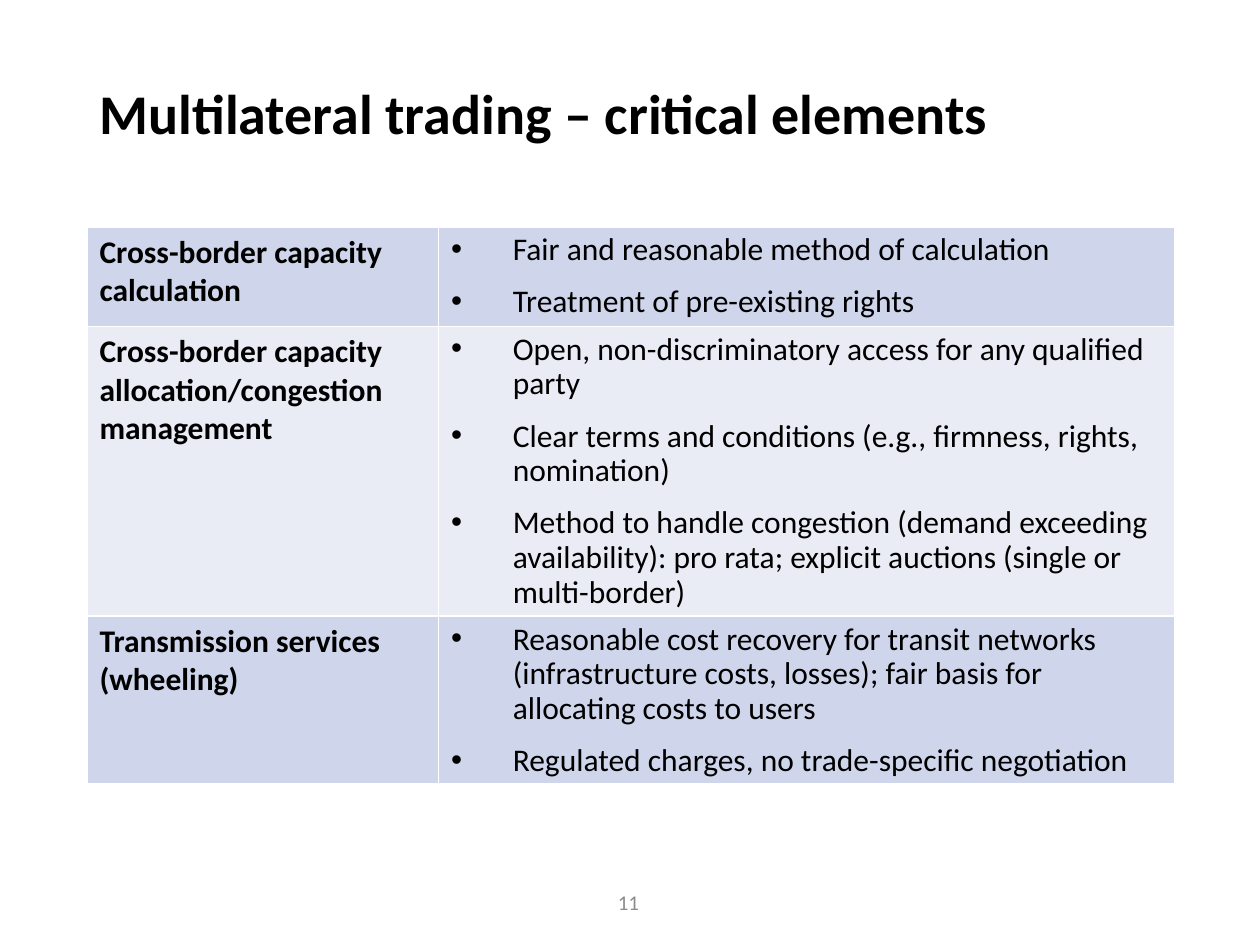
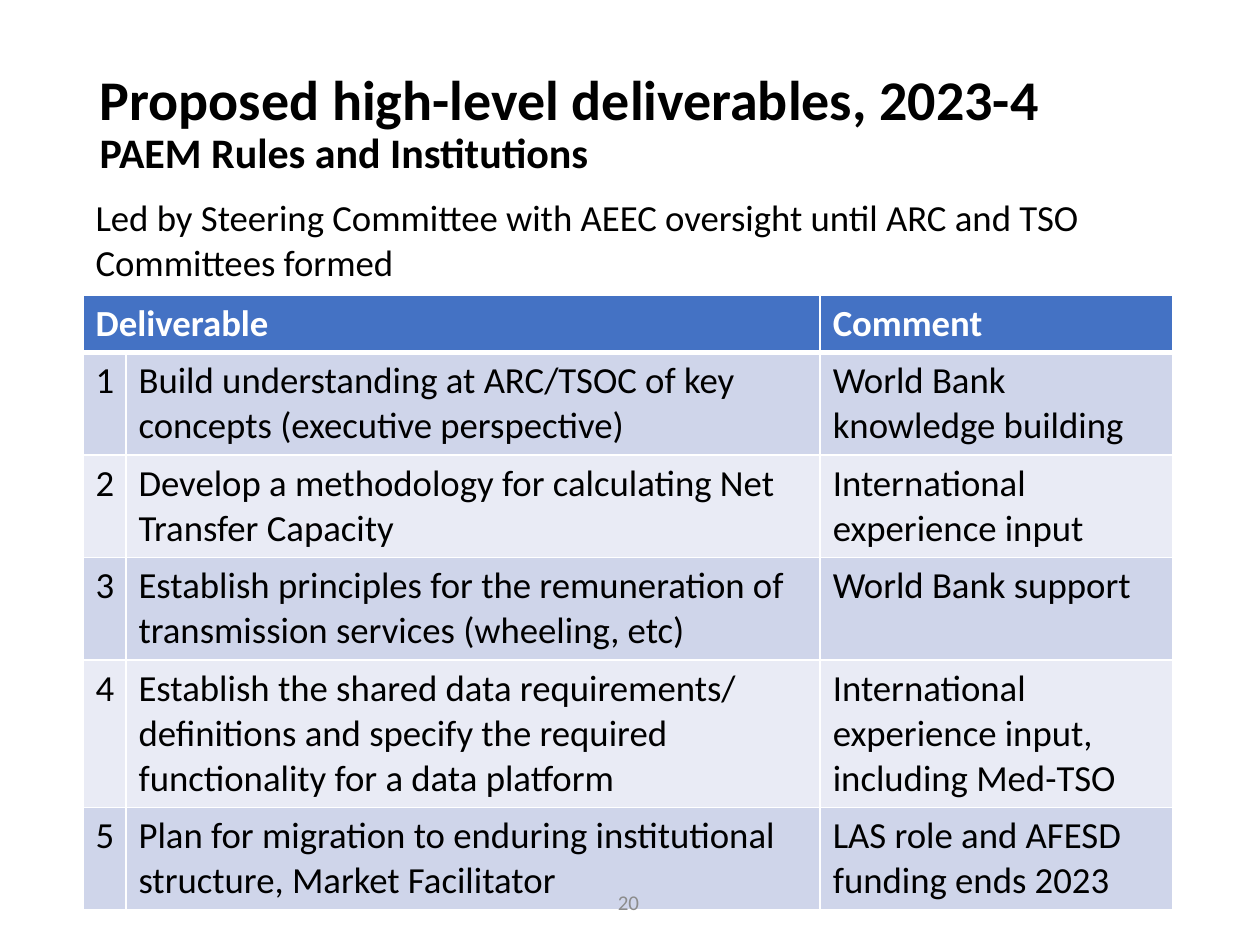
from lxml.etree import SubElement
from pptx import Presentation
from pptx.dml.color import RGBColor
from pptx.enum.text import MSO_ANCHOR, PP_ALIGN
from pptx.oxml.ns import qn
from pptx.util import Inches, Pt

# Colours
BLACK = RGBColor(0x00, 0x00, 0x00)
WHITE = RGBColor(0xFF, 0xFF, 0xFF)
GREY = RGBColor(0x8C, 0x8C, 0x8C)
BLUE = RGBColor(0x44, 0x72, 0xC4)
BANDS = (RGBColor(0xCF, 0xD5, 0xEA), RGBColor(0xE9, 0xEB, 0xF5))

# Text formats
BASE = {"name": "Calibri", "bold": False}
HEAD = {**BASE, "size": Pt(32), "bold": True}
SUB = {**HEAD, "size": Pt(24)}
BODY = {**BASE, "size": Pt(18)}
LABEL = {**BODY, "bold": True}
LARGE = {**BASE, "size": Pt(21)}
TOP = {**LARGE, "bold": True}
SMALL = {**BASE, "size": Pt(12)}

# Grid of 100 columns by 75 rows
WIDE, HIGH = Inches(10), Inches(7.5)
COLS, ROWS = 100, 75
INDENT = 4.9

# Table content
TRADE = [
    ("Cross-border capacity calculation", [
        "Fair and reasonable method of calculation",
        "Treatment of pre-existing rights"]),
    ("Cross-border capacity allocation/congestion management", [
        "Open, non-discriminatory access for any qualified party",
        "Clear terms and conditions (e.g., firmness, rights, nomination)",
        "Method to handle congestion (demand exceeding availability): "
        "pro rata; explicit auctions (single or multi-border)"]),
    ("Transmission services (wheeling)", [
        "Reasonable cost recovery for transit networks (infrastructure "
        "costs, losses); fair basis for allocating costs to users",
        "Regulated charges, no trade-specific negotiation"]),
]
GOALS = [
    ("Build understanding at ARC/TSOC of key concepts (executive perspective)",
     "World Bank knowledge building"),
    ("Develop a methodology for calculating Net Transfer Capacity",
     "International experience input"),
    ("Establish principles for the remuneration of transmission services "
     "(wheeling, etc)", "World Bank support"),
    ("Establish the shared data requirements/ definitions and specify the "
     "required functionality for a data platform",
     "International experience input, including Med-TSO"),
    ("Plan for migration to enduring institutional structure, "
     "Market Facilitator", "LAS role and AFESD funding ends 2023"),
]


def across(n):
    return round(WIDE * n / COLS)


def down(n):
    return round(HIGH * n / ROWS)


class Deck:
    def __init__(self):
        self.file = Presentation()
        self.file.slide_width, self.file.slide_height = WIDE, HIGH
        self.slide = None

    def add_run(self, para, text, form, tint=BLACK):
        run = para.add_run()
        run.text = text
        for key, value in form.items():
            setattr(run.font, key, value)
        run.font.color.rgb = tint

    def title(self, row, text, sub=None):
        """Start a slide with its title."""
        self.slide = self.file.slides.add_slide(self.file.slide_layouts[5])
        shape = self.slide.shapes.title
        spot = {"left": across(6.9), "top": down(row),
                "width": across(86.2), "height": down(10.2)}
        for key, value in spot.items():
            setattr(shape, key, value)
        frame = shape.text_frame
        frame.vertical_anchor = MSO_ANCHOR.TOP
        para = frame.paragraphs[0]
        para.alignment, para.line_spacing = PP_ALIGN.LEFT, 0.9
        self.add_run(para, text, HEAD)
        if sub:
            para.add_line_break()
            self.add_run(para, sub, SUB)

    def text(self, x, y, w, h, text, form, tint=BLACK,
             align=PP_ALIGN.LEFT, anchor=MSO_ANCHOR.TOP):
        box = self.slide.shapes.add_textbox(
            across(x), down(y), across(w), down(h))
        frame = box.text_frame
        frame.word_wrap, frame.vertical_anchor = True, anchor
        para = frame.paragraphs[0]
        para.alignment = align
        self.add_run(para, text, form, tint)

    def number(self, value):
        self.text(29.2, 69.6, 22.5, 4, str(value), SMALL, GREY,
                  PP_ALIGN.RIGHT, MSO_ANCHOR.MIDDLE)

    def table(self, x, y, widths, heights, head=False):
        grid = self.slide.shapes.add_table(
            len(heights), len(widths), across(x), down(y),
            across(sum(widths)), down(sum(heights))).table
        grid.first_row, grid.horz_banding = head, False
        for col, width in zip(grid.columns, widths):
            col.width = across(width)
        for row, height in zip(grid.rows, heights):
            row.height = down(height)
        return grid

    def edge(self, cell, base=1):
        """Draw white cell borders."""
        props = cell._tc.get_or_add_tcPr()
        for side, size in zip("LRTB", (1, 1, 1, base)):
            line = SubElement(props, qn(f"a:ln{side}"), w=str(Pt(size)))
            fill = SubElement(line, qn("a:solidFill"))
            SubElement(fill, qn("a:srgbClr"), val=str(WHITE))

    def cell(self, cell, text, form, fill, tint=BLACK, base=1):
        """Fill a cell; a list of texts becomes bullets."""
        self.edge(cell, base)
        cell.fill.solid()
        cell.fill.fore_color.rgb = fill
        frame = cell.text_frame
        if isinstance(text, str):
            self.add_run(frame.paragraphs[0], text, form, tint)
            return
        for i, item in enumerate(text):
            para = frame.add_paragraph() if i else frame.paragraphs[0]
            self.bullet(para)
            para.line_spacing = 0.9
            para.space_before = Pt(10 if i else 0)
            self.add_run(para, item, form, tint)

    def bullet(self, para):
        props = para._p.get_or_add_pPr()
        props.set("marL", str(across(INDENT)))
        props.set("indent", str(-across(INDENT)))
        SubElement(props, qn("a:buFont"), typeface="Arial")
        SubElement(props, qn("a:buChar"), char="•")


def trade(deck):
    deck.title(6.3, "Multilateral trading – critical elements")
    deck.number(11)
    grid = deck.table(6.9, 18, (27.9, 58.4), (7.9, 23, 13.3))
    for i, (label, points) in enumerate(TRADE):
        fill = BANDS[i % 2]
        deck.cell(grid.cell(i, 0), label, LABEL, fill)
        deck.cell(grid.cell(i, 1), points, BODY, fill)


def goals(deck):
    deck.title(5.2, "Proposed high-level deliverables, 2023-4",
               "PAEM Rules and Institutions")
    grid = deck.table(6.6, 23.4, (3.4, 55.1, 28),
                      (4.5, 8.1, 8.1, 8.1, 11.7, 8.1), head=True)
    # Header row
    grid.cell(0, 0).merge(grid.cell(0, 1))
    for col, name in ((0, "Deliverable"), (2, "Comment")):
        deck.cell(grid.cell(0, col), name, TOP, BLUE, WHITE, base=3)
    deck.edge(grid.cell(0, 1), base=3)
    # Numbered rows
    for i, goal in enumerate(GOALS, 1):
        for col, text in enumerate((str(i), *goal)):
            deck.cell(grid.cell(i, col), text, LARGE, BANDS[(i - 1) % 2])
    deck.number(20)
    deck.text(6.6, 15, 87.8, 8.1, "Led by Steering Committee with AEEC "
              "oversight until ARC and TSO Committees formed", LARGE)


def main():
    deck = Deck()
    trade(deck)
    goals(deck)
    deck.file.save("out.pptx")


if __name__ == "__main__":
    main()
